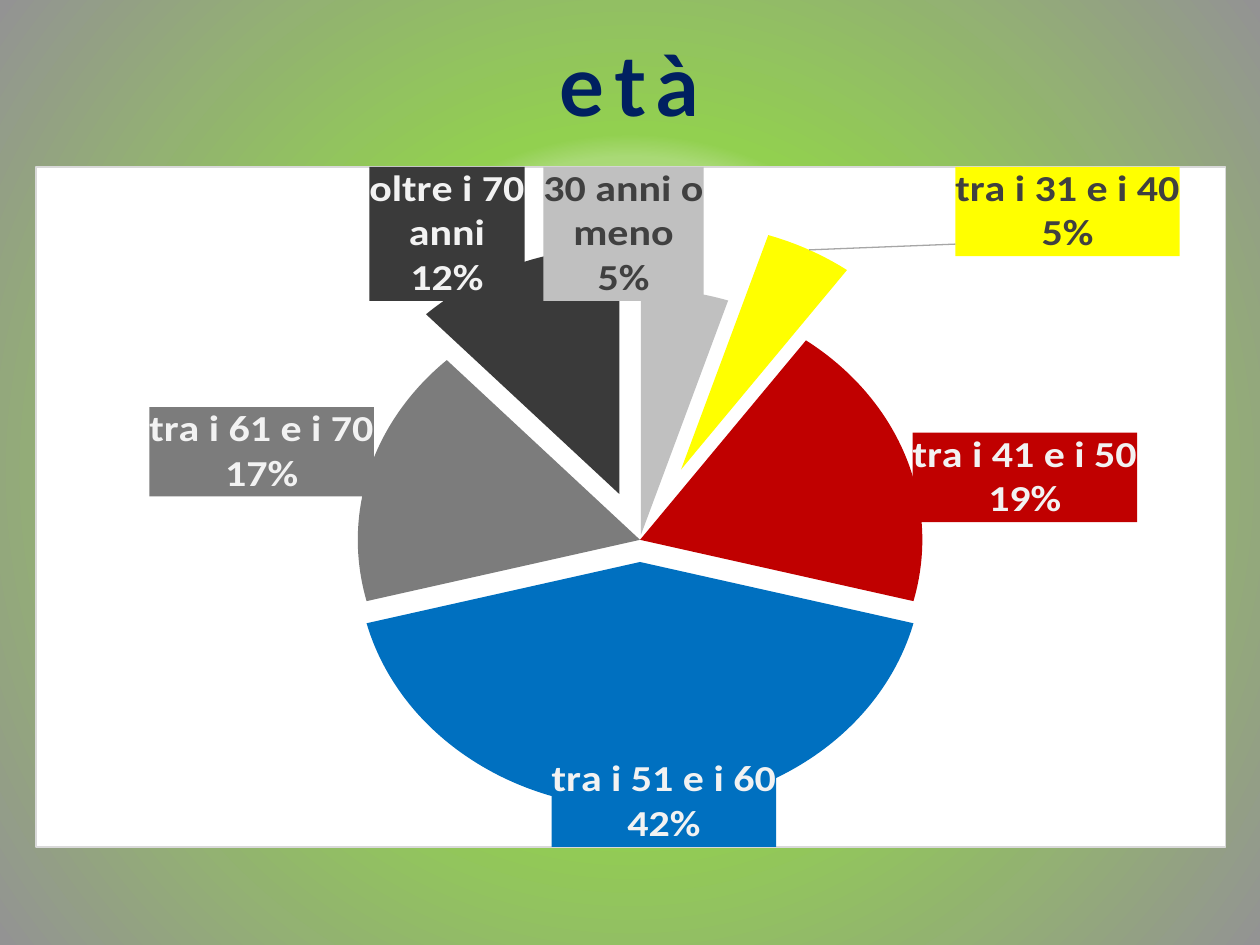
"""Build the age slide: a title over an exploded pie chart."""
from lxml import etree
from pptx import Presentation
from pptx import util as u
from pptx.chart.data import CategoryChartData
from pptx.dml.color import RGBColor
from pptx.enum import chart as charts, text
from pptx.oxml import parse_xml
from pptx.oxml.ns import nsdecls, qn


def color(value):
    return RGBColor.from_string(value)


def solid(value):
    return f'<a:solidFill><a:srgbClr val="{value}"/></a:solidFill>'


presentation = Presentation()
presentation.slide_width, presentation.slide_height = u.Inches(10), u.Inches(7.5)
width, height = presentation.slide_width, presentation.slide_height
slide = presentation.slides.add_slide(presentation.slide_layouts[6])

stops = "".join(
    f'<a:gs pos="{position * 1000}"><a:srgbClr val="{value}"/></a:gs>'
    for position, value in [(0, "F9F9F9"), (40, "A9D976"), (43, "92D050"), (100, "939393")])
slide.background.fill.solid()
background = slide.element.find(".//" + qn("p:bgPr"))
background.replace(background[0], parse_xml(
    f'<a:gradFill {nsdecls("a")} rotWithShape="1"><a:gsLst>{stops}</a:gsLst><a:path path="circle">'
    '<a:fillToRect l="50000" t="50000" r="50000" b="50000"/></a:path></a:gradFill>'))

title = slide.shapes.add_textbox(
    int(width * 0.043), int(height * 0.028), int(width * 0.913), int(height * 0.121))
title.text_frame.word_wrap = True
paragraph = title.text_frame.paragraphs[0]
paragraph.alignment = text.PP_ALIGN.CENTER
run = paragraph.add_run()
run.text = "età"
run.font.name, run.font.size, run.font.bold = "Lato", u.Pt(48), True
run.font.color.rgb = color("002060")
run._r.get_or_add_rPr().set("spc", "600")

ages = [
    ("30 anni o meno", 5, "C0C0C0", "404040", 2, (-0.12, 0)),
    ("tra i 31 e i 40", 5, "FFFF00", "404040", 32, (0.12, 0)),
    ("tra i 41 e i 50", 19, "C00000", "F2F2F2", 0, (0, 0.1)),
    ("tra i 51 e i 60", 42, "0070C0", "F2F2F2", 9, (0.02, -0.05)),
    ("tra i 61 e i 70", 17, "7C7C7C", "F2F2F2", 0, (0.01, 0.04)),
    ("oltre i 70 anni", 12, "3A3A3A", "F2F2F2", 20, (0.01, 0.04)),
]
chart_data = CategoryChartData()
chart_data.categories = [age[0] for age in ages]
chart_data.add_series("Series 1", [age[1] for age in ages])
chart = slide.shapes.add_chart(
    charts.XL_CHART_TYPE.PIE, int(width * 0.028), int(height * 0.132),
    int(width * 0.945), int(height * 0.825), chart_data).chart
chart.has_title = chart.has_legend = False
chart.font.name, chart.font.size = "Calibri", u.Pt(10)
chart.font.color.rgb = color("000000")
plot = chart.plots[0]
plot.vary_by_categories = True

chart_space = chart.element
chart_space.find(qn("c:chart")).addnext(parse_xml(
    f'<c:spPr {nsdecls("c", "a")}>{solid("FFFFFF")}<a:ln w="9525">{solid("D9D9D9")}</a:ln></c:spPr>'))
plot_area = chart_space.find(".//" + qn("c:plotArea"))
for layout in plot_area.findall(qn("c:layout")):
    plot_area.remove(layout)
plot_area.insert(0, parse_xml(
    f'<c:layout {nsdecls("c")}><c:manualLayout><c:layoutTarget val="inner"/>'
    '<c:xMode val="edge"/><c:yMode val="edge"/><c:x val="0.101"/><c:y val="0.186"/>'
    '<c:w val="0.814"/><c:h val="0.725"/></c:manualLayout></c:layout>'))

series = plot.series[0]
labels = series.data_labels
labels.show_value, labels.show_percentage, labels.show_category_name = False, True, True
labels.position = charts.XL_LABEL_POSITION.OUTSIDE_END
labels.font.name, labels.font.size, labels.font.bold = "Calibri", u.Pt(24), True
labels.font.color.rgb = color("404040")
label_list = series._element.find(qn("c:dLbls"))
for leader in label_list.findall(qn("c:showLeaderLines")):
    label_list.remove(leader)
etree.SubElement(label_list, qn("c:showLeaderLines"), val="1")
label_list.append(parse_xml(
    f'<c:leaderLines {nsdecls("c", "a")}><c:spPr><a:ln w="9525">{solid("A6A6A6")}</a:ln>'
    '</c:spPr></c:leaderLines>'))

for index, (name, share, fill, ink, explosion, (shift_x, shift_y)) in enumerate(ages):
    point = series.points[index]
    point.format.fill.solid()
    point.format.fill.fore_color.rgb = color(fill)
    data_point = series._element.findall(qn("c:dPt"))[index]
    exploded = etree.Element(qn("c:explosion"), val=str(explosion))
    data_point.find(qn("c:spPr")).addprevious(exploded)
    label_list.insert(index, parse_xml(
        f'<c:dLbl {nsdecls("c", "a")}><c:idx val="{index}"/><c:layout><c:manualLayout>'
        f'<c:x val="{shift_x}"/><c:y val="{shift_y}"/></c:manualLayout></c:layout>'
        f'<c:spPr>{solid(fill)}</c:spPr><c:txPr><a:bodyPr/><a:p><a:pPr>'
        f'<a:defRPr sz="2400" b="1">{solid(ink)}<a:latin typeface="Calibri"/></a:defRPr>'
        '</a:pPr></a:p></c:txPr><c:dLblPos val="outEnd"/><c:showLegendKey val="0"/>'
        '<c:showVal val="0"/><c:showCatName val="1"/><c:showSerName val="0"/>'
        '<c:showPercent val="1"/><c:showBubbleSize val="0"/>'
        '<c:separator>\n</c:separator></c:dLbl>'))

presentation.save("out.pptx")
